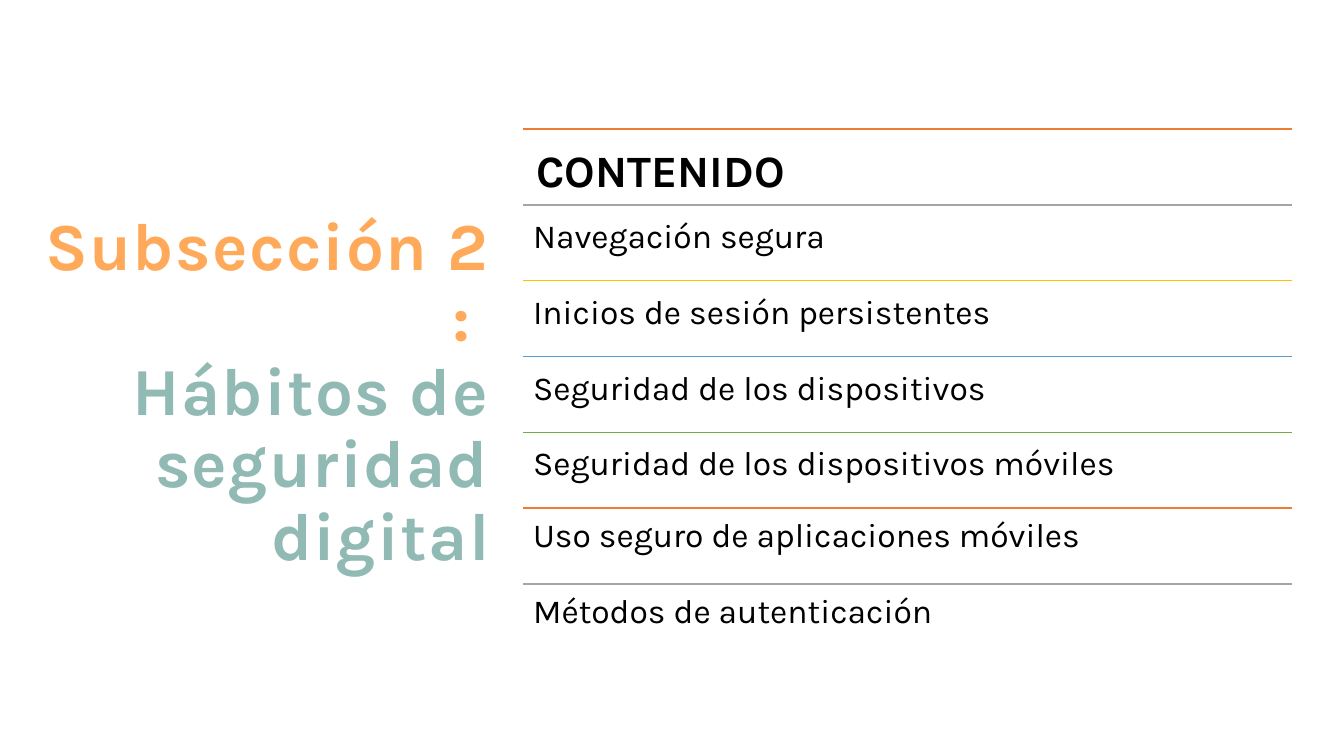
from dataclasses import dataclass

from lxml import etree
from pptx import Presentation
from pptx.dml.color import RGBColor
from pptx.enum.shapes import MSO_CONNECTOR
from pptx.enum.text import MSO_ANCHOR, PP_ALIGN
from pptx.oxml.ns import qn
from pptx.slide import Slide
from pptx.util import Pt

STRAIGHT = MSO_CONNECTOR.STRAIGHT
MIDDLE = MSO_ANCHOR.MIDDLE
RIGHT = PP_ALIGN.RIGHT

FONT = "Karla"
BLACK = RGBColor(0x00, 0x00, 0x00)
APRICOT = RGBColor(0xFF, 0xAA, 0x5A)
SAGE = RGBColor(0x92, 0xBA, 0xB5)
ORANGE = RGBColor(0xED, 0x7D, 0x31)
GRAY = RGBColor(0xA5, 0xA5, 0xA5)
GOLD = RGBColor(0xFF, 0xC0, 0x00)
BLUE = RGBColor(0x5B, 0x9B, 0xD5)
GREEN = RGBColor(0x70, 0xAD, 0x47)

# List geometry, in points
LIST_LEFT, LIST_TOP = 373.7, 92.2
LIST_WIDTH, ROW_HEIGHT = 549.4, 54.15


@dataclass
class Row:
    text: str
    color: RGBColor
    size: float = 24
    bold: bool = False
    inset: float = 7.2
    line_spacing: float = 1.0


ROWS = [
    Row("CONTENIDO", ORANGE, size=32, bold=True, inset=9.6),
    Row("Navegación segura", GRAY),
    Row("Inicios de sesión persistentes", GOLD),
    Row("Seguridad de los dispositivos", BLUE),
    Row("Seguridad de los dispositivos móviles", GREEN),
    Row("Uso seguro de aplicaciones móviles", ORANGE, line_spacing=0.9),
    Row("Métodos de autenticación", GRAY, line_spacing=0.9),
]


def format_run(r, size: float, color: RGBColor, bold: bool) -> None:
    r.font.name = FONT
    r.font.size = Pt(size)
    r.font.bold = bold
    r.font.color.rgb = color


def add_title(s: Slide) -> None:
    tb = s.shapes.add_textbox(Pt(15.1), Pt(61.2), Pt(342), Pt(439.9))
    tf = tb.text_frame
    tf.word_wrap = True
    tf.vertical_anchor = MIDDLE
    p = tf.paragraphs[0]
    p.alignment = RIGHT
    p.line_spacing = 0.9
    p.text = "Subsección 2 : \vHábitos de seguridad digital"
    for r, color in zip(p.runs, (APRICOT, SAGE)):
        format_run(r, 48, color, True)
        r.font._element.set("spc", "100")


def add_row(s: Slide, row: Row, top: float) -> None:
    # Rule above the row
    rule = s.shapes.add_connector(
        STRAIGHT, Pt(LIST_LEFT), Pt(top), Pt(LIST_LEFT + LIST_WIDTH), Pt(top))
    rule.line.color.rgb = row.color
    rule.line.width = Pt(1)
    etree.SubElement(rule._element.spPr, qn("a:effectLst"))

    # Row text
    tb = s.shapes.add_textbox(Pt(LIST_LEFT), Pt(top), Pt(LIST_WIDTH), Pt(ROW_HEIGHT))
    tf = tb.text_frame
    tf.word_wrap = True
    tf.margin_left = tf.margin_right = Pt(row.inset)
    tf.margin_top = tf.margin_bottom = Pt(row.inset)
    p = tf.paragraphs[0]
    p.text = row.text
    p.line_spacing = row.line_spacing
    format_run(p.runs[0], row.size, BLACK, row.bold)


def main() -> None:
    prs = Presentation()
    prs.slide_width, prs.slide_height = Pt(960), Pt(540)
    s = prs.slides.add_slide(prs.slide_layouts[6])
    add_title(s)
    for i, row in enumerate(ROWS):
        add_row(s, row, LIST_TOP + i * ROW_HEIGHT)
    prs.save("out.pptx")


if __name__ == "__main__":
    main()
